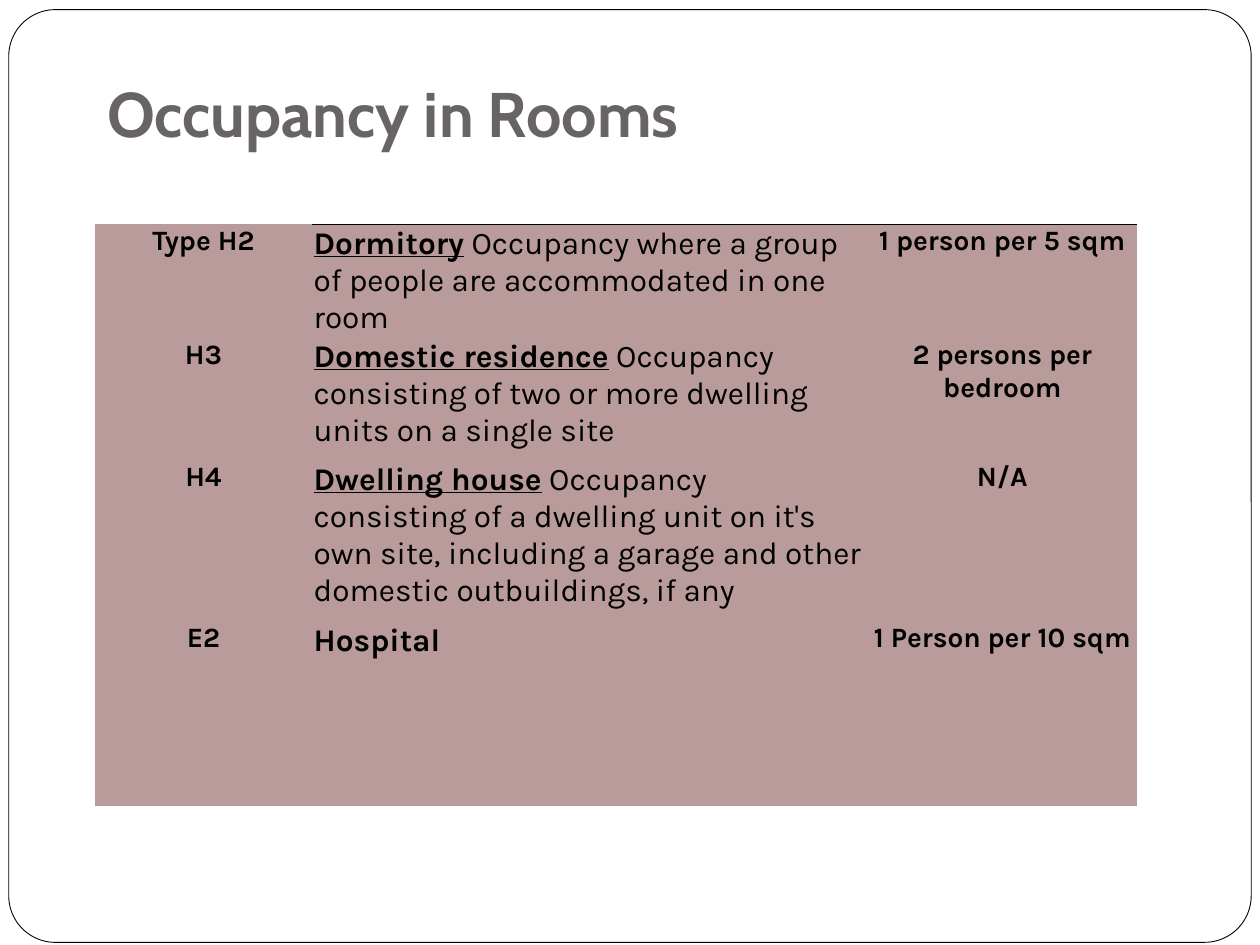
"""Build the room occupancy slide with its table of occupancy types."""
from typing import NamedTuple

from lxml.etree import SubElement
from pptx import Presentation
from pptx.dml.color import RGBColor
from pptx.enum.shapes import MSO_SHAPE as Shape
from pptx.enum.text import MSO_ANCHOR as Anchor, PP_ALIGN as Align
from pptx.oxml.ns import qn
from pptx.util import Pt

INK, PANEL, PAPER, TITLE_INK = "000000", "B99B9B", "FFFFFF", "696464"
PLAIN_STYLE = "{2D5ABB26-0587-4C30-8999-92F81FD0307C}"
COLUMN_WIDTHS = (124.5, 317.5, 153.5)


class Occupancy(NamedTuple):
    code: str
    name: str
    detail: str
    load: str
    height: float


OCCUPANCIES = (
    Occupancy("Type H2", "Dormitory",
              " Occupancy where a group of people are accommodated in one room",
              "1 person per 5 sqm", 61),
    Occupancy("H3", "Domestic residence",
              " Occupancy consisting of two or more dwelling units on a single site",
              "2 persons per bedroom", 70),
    Occupancy("H4", "Dwelling house",
              " Occupancy consisting of a dwelling unit on it's own site, "
              "including a garage and other domestic outbuildings, if any",
              "N/A", 92),
    Occupancy("E2", "Hospital", "", "1 Person per 10 sqm", 106),
)


def paint(color_format, color: str) -> None:
    """Set a colour from a hex string."""
    color_format.rgb = RGBColor.from_string(color)


def fill_solid(item, color: str) -> None:
    """Give a shape or cell a solid fill."""
    item.fill.solid()
    paint(item.fill.fore_color, color)


def set_font(para, name: str, size: float, color: str) -> None:
    """Set the font shared by all runs of a paragraph."""
    para.font.name = name
    para.font.size = Pt(size)
    paint(para.font.color, color)


def add_frame(page) -> None:
    """Draw the rounded page outline behind the title."""
    outline = page.shapes.add_shape(Shape.ROUNDED_RECTANGLE, Pt(5), Pt(5.5), Pt(710), Pt(533))
    outline.adjustments[0] = 0.05
    outline.shadow.inherit = False
    fill_solid(outline, PAPER)
    paint(outline.line.color, INK)
    outline.line.width = Pt(0.5)
    outline.element.addnext(page.shapes.title.element)


def set_title(title, text: str) -> None:
    """Place and format the title placeholder."""
    title.left, title.top, title.width, title.height = Pt(54), Pt(37.5), Pt(590), Pt(55.5)
    fill_solid(title, PAPER)
    box = title.text_frame
    box.text = text
    box.vertical_anchor = Anchor.BOTTOM
    box.margin_bottom = Pt(7.2)
    para = box.paragraphs[0]
    para.alignment = Align.LEFT
    para.font.bold = True
    set_font(para, "Cabin", 36, TITLE_INK)


def fill_cell(cell, lead: str, detail: str, size: float, align: Align) -> None:
    """Write a bold lead, underlined when plain detail follows it."""
    fill_solid(cell, PANEL)
    cell.margin_left = cell.margin_right = cell.margin_top = cell.margin_bottom = Pt(0.75)
    para = cell.text_frame.paragraphs[0]
    para.alignment = align
    set_font(para, "Karla", size, INK)
    span = para.add_run()
    span.text = lead
    span.font.bold = True
    if detail:
        span.font.underline = True
        para.add_run().text = detail


def add_top_border(cell, color: str, width: float) -> None:
    """Rule the top edge of a table cell."""
    properties = cell._tc.get_or_add_tcPr()
    border = SubElement(properties, qn("a:lnT"), w=str(Pt(width)))
    fill = SubElement(border, qn("a:solidFill"))
    SubElement(fill, qn("a:srgbClr"), val=color)
    properties.insert(0, border)


def add_occupancy_table(page) -> None:
    """Add the table with one row per occupancy type."""
    graphic = page.shapes.add_table(
        len(OCCUPANCIES), len(COLUMN_WIDTHS), Pt(54), Pt(128),
        Pt(sum(COLUMN_WIDTHS)), Pt(sum(item.height for item in OCCUPANCIES)))
    graphic.element.find(f".//{qn('a:tableStyleId')}").text = PLAIN_STYLE
    table = graphic.table
    table.first_row = table.horz_banding = False
    for column, width in zip(table.columns, COLUMN_WIDTHS):
        column.width = Pt(width)
    for row, item in zip(table.rows, OCCUPANCIES):
        row.height = Pt(item.height)
        code, description, load = row.cells
        fill_cell(code, item.code, "", 16, Align.CENTER)
        fill_cell(description, item.name, item.detail, 18, Align.LEFT)
        fill_cell(load, item.load, "", 16, Align.CENTER)
    for column in (1, 2):
        add_top_border(table.cell(0, column), INK, 0.5)


def main() -> None:
    """Build and save the deck."""
    deck = Presentation()
    deck.slide_width, deck.slide_height = Pt(720), Pt(540)
    page = deck.slides.add_slide(deck.slide_layouts[5])
    add_frame(page)
    set_title(page.shapes.title, "Occupancy in Rooms")
    add_occupancy_table(page)
    deck.save("out.pptx")


if __name__ == "__main__":
    main()
